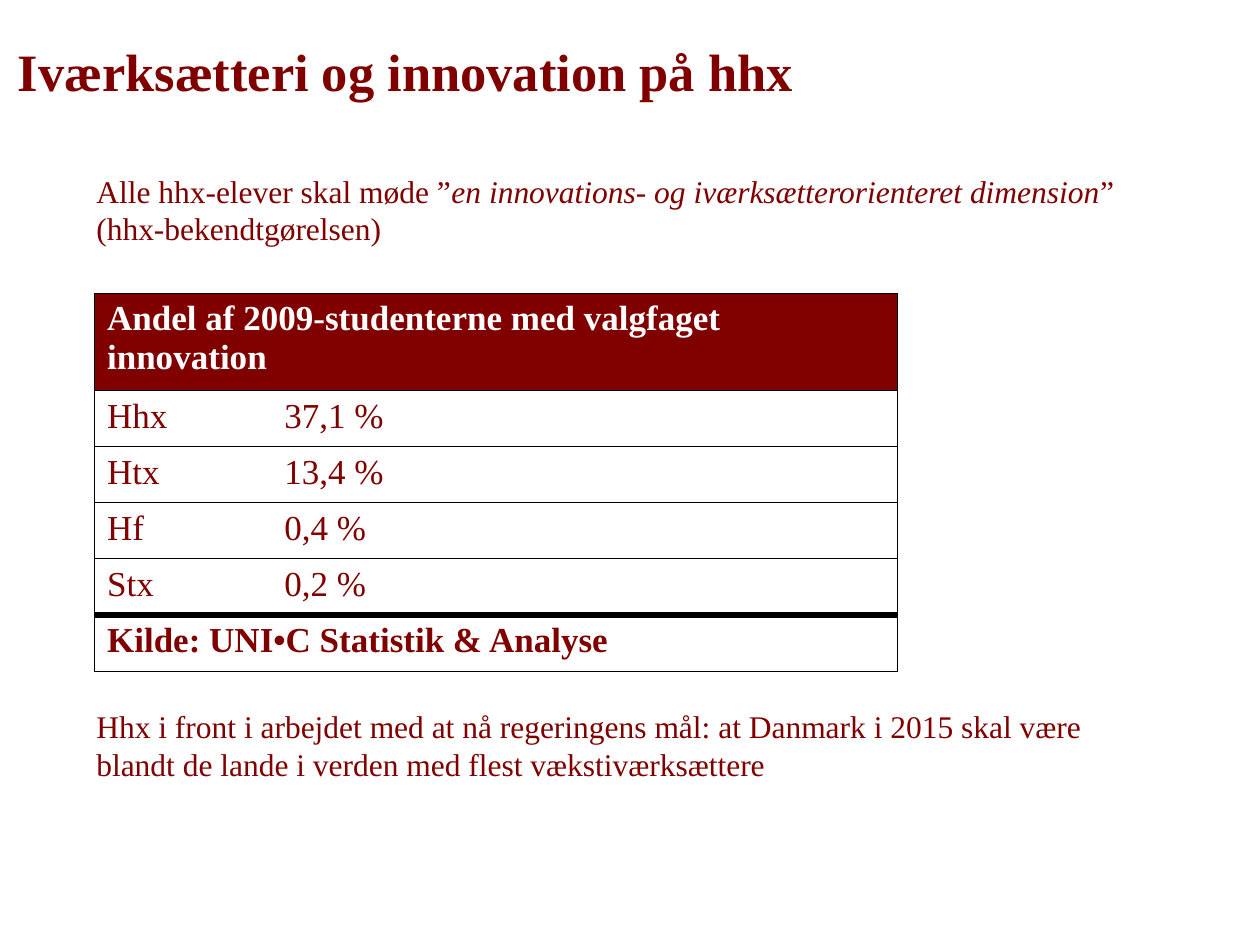
from dataclasses import dataclass

from lxml import etree
from pptx import Presentation
from pptx.dml.color import RGBColor
from pptx.oxml import ns
from pptx.util import Pt


@dataclass(frozen=True)
class Theme:
    font: str = "Times New Roman"
    maroon: RGBColor = RGBColor(0x80, 0x00, 0x00)
    white: RGBColor = RGBColor(0xFF, 0xFF, 0xFF)
    border: str = "000000"
    title: float = 30
    body: float = 18
    table: float = 20
    thin: float = 0.75
    thick: float = 4


theme = Theme()


def add_run(paragraph, content, size, color=theme.maroon, bold=False, italic=False):
    run = paragraph.add_run()
    run.text = content
    run.font.name = theme.font
    run.font.size = Pt(size)
    run.font.color.rgb = color
    run.font.bold = bold
    run.font.italic = italic


def set_borders(cell, **widths):
    """Draw the sides L, R, T, B at the given widths in points; 0 hides a side."""
    properties = cell._tc.get_or_add_tcPr()
    for index, side in enumerate("LRTB"):
        width = widths.get(side, theme.thin)
        line = etree.Element(ns.qn(f"a:ln{side}"), w=str(int(Pt(width))))
        if width:
            fill = etree.SubElement(line, ns.qn("a:solidFill"))
            etree.SubElement(fill, ns.qn("a:srgbClr"), val=theme.border)
        else:
            etree.SubElement(line, ns.qn("a:noFill"))
        properties.insert(index, line)


presentation = Presentation()
presentation.slide_width, presentation.slide_height = Pt(720), Pt(540)
slide = presentation.slides.add_slide(presentation.slide_layouts[6])

# Title and the two statements: box, type size, bold, paragraphs of (text, italic) runs
text_boxes = [
    ((3, 19, 516, 44), theme.title, True,
     [[("Iværksætteri og innovation på hhx", False)]]),
    ((48, 94.5, 618, 51), theme.body, False,
     [[("Alle hhx-elever skal møde ”", False),
       ("en innovations- og iværksætterorienteret dimension", True),
       ("”", False)],
      [("(hhx-bekendtgørelsen)", False)]]),
    ((48, 400.5, 618, 51), theme.body, False,
     [[("Hhx i front i arbejdet med at nå regeringens mål: at Danmark i 2015 skal være "
        "blandt de lande i verden med flest vækstiværksættere", False)]]),
]
for box, size, bold, paragraphs in text_boxes:
    frame = slide.shapes.add_textbox(*map(Pt, box)).text_frame
    frame.word_wrap = True
    for number, runs in enumerate(paragraphs):
        paragraph = frame.add_paragraph() if number else frame.paragraphs[0]
        for content, italic in runs:
            add_run(paragraph, content, size, bold=bold, italic=italic)

# Share of students per programme
rows = [
    ("Andel af 2009-studenterne med valgfaget innovation",),
    ("Hhx", "37,1 %"),
    ("Htx", "13,4 %"),
    ("Hf", "0,4 %"),
    ("Stx", "0,2 %"),
    ("Kilde: UNI•C Statistik & Analyse",),
]
header_height, row_height = 55.5, 32.1
column_widths = (101.3, 357.7)
source_row = len(rows) - 1
table = slide.shapes.add_table(
    len(rows), 2, Pt(54), Pt(167.6), Pt(sum(column_widths)),
    Pt(header_height + source_row * row_height)).table
for column, width in zip(table.columns, column_widths):
    column.width = Pt(width)

for row, contents in enumerate(rows):
    table.rows[row].height = Pt(row_height if row else header_height)
    spans = len(contents) == 1
    if spans:
        table.cell(row, 0).merge(table.cell(row, 1))
    for column in range(2):
        cell = table.cell(row, column)
        if row == 0:
            cell.fill.solid()
            cell.fill.fore_color.rgb = theme.maroon
        else:
            cell.fill.background()
        set_borders(
            cell,
            L=0 if column else theme.thin,
            R=theme.thin if column or spans else 0,
            T=theme.thick if row == source_row else theme.thin,
            B=theme.thick if row == source_row - 1 else theme.thin)
        if column < len(contents):
            add_run(cell.text_frame.paragraphs[0], contents[column], theme.table,
                    color=theme.maroon if row else theme.white, bold=spans)

presentation.save("out.pptx")
